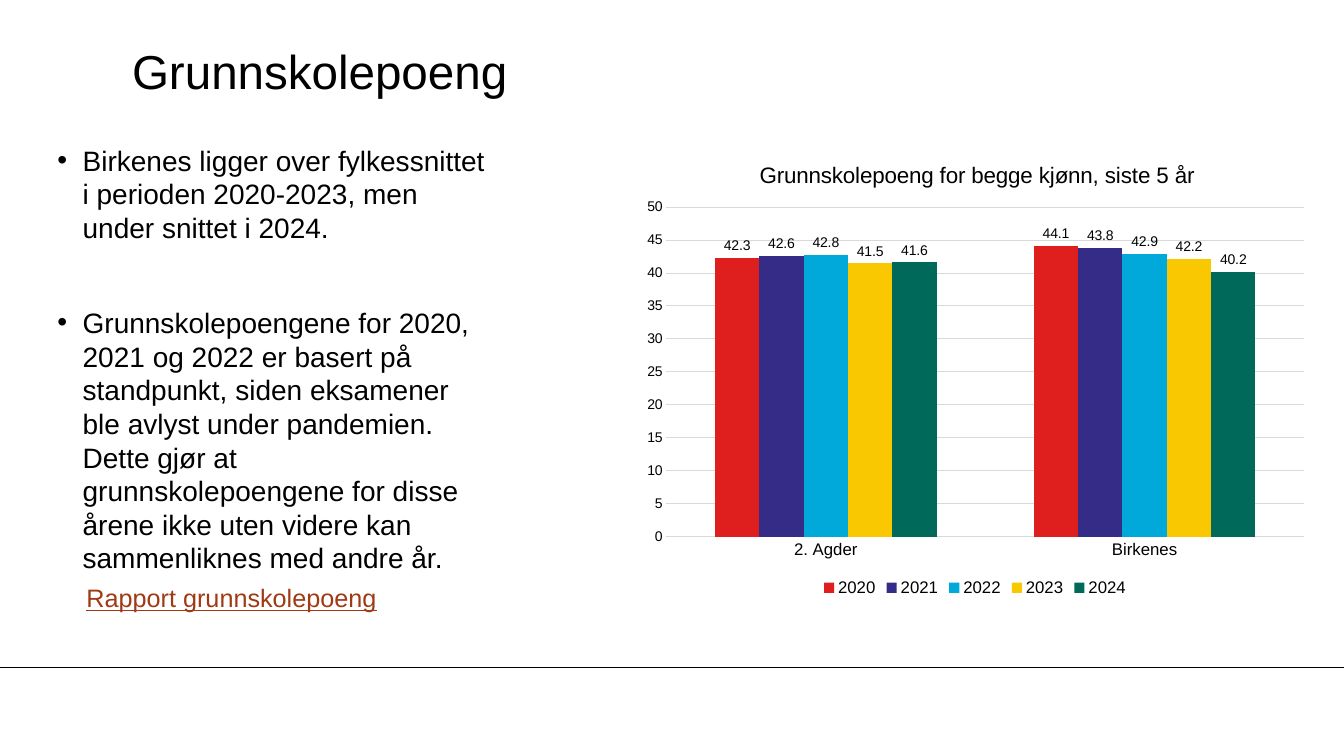
from lxml import etree
from pptx import Presentation
from pptx import util as u
from pptx.chart import data as chart_data
from pptx.dml import color
from pptx.enum import chart as ch, shapes, text
from pptx.oxml import ns

BLACK, GREY = "000000", "D9D9D9"


def style(font, size, hex_color=BLACK):
    font.name, font.size, font.bold = "Arial", u.Pt(size), False
    font.color.rgb = color.RGBColor.from_string(hex_color)


def place(parent, index, **fractions):
    """Give a chart part a fixed place, in fractions of the chart."""
    for old in parent.findall(ns.qn("c:layout")):
        parent.remove(old)
    layout = etree.Element(ns.qn("c:layout"))
    manual = etree.SubElement(layout, ns.qn("c:manualLayout"))
    if "w" in fractions:
        etree.SubElement(manual, ns.qn("c:layoutTarget"), val="inner")
    for axis in "xy":
        etree.SubElement(manual, ns.qn(f"c:{axis}Mode"), val="edge")
    for key, value in fractions.items():
        etree.SubElement(manual, ns.qn(f"c:{key}"), val=str(value))
    parent.insert(index, layout)


deck = Presentation()
deck.slide_width, deck.slide_height = u.Inches(13.33), u.Inches(7.5)
page = deck.slides.add_slide(deck.slide_layouts[5])

# Footer line
rule = page.shapes.add_connector(shapes.MSO_CONNECTOR.STRAIGHT, 0, u.Inches(6.62),
                                 u.Inches(13.33), u.Inches(6.62))
rule.line.color.rgb = color.RGBColor.from_string(BLACK)
rule.line.width = u.Pt(0.75)
etree.SubElement(rule._element.spPr, ns.qn("a:effectLst"))

# Title
title = page.shapes.title
title.left, title.top = u.Inches(1.31), u.Inches(0.32)
title.width, title.height = u.Inches(11.1), u.Inches(0.75)
title.text_frame.text = "Grunnskolepoeng"
title.text_frame.vertical_anchor = text.MSO_ANCHOR.MIDDLE

# Bullets
body = page.shapes.add_textbox(u.Inches(0.57), u.Inches(1.42), u.Inches(4.33), u.Inches(4.3))
body.text_frame.word_wrap = True
for frame in (title.text_frame, body.text_frame):
    frame.margin_left = frame.margin_right = frame.margin_top = frame.margin_bottom = 0
title.text_frame.paragraphs[0].alignment = text.PP_ALIGN.LEFT
style(title.text_frame.paragraphs[0].runs[0].font, 34)

points = [
    "Birkenes ligger over fylkessnittet i perioden 2020-2023, men under snittet i 2024.",
    "Grunnskolepoengene for 2020, 2021 og 2022 er basert på standpunkt, siden eksamener "
    "ble avlyst under pandemien. Dette gjør at grunnskolepoengene for disse årene ikke "
    "uten videre kan sammenliknes med andre år.",
]
body.text_frame.text = "\n".join(points)
for number, para in enumerate(body.text_frame.paragraphs):
    props = para._p.get_or_add_pPr()
    props.set("marL", str(u.Inches(0.25)))
    props.set("indent", str(-u.Inches(0.25)))
    etree.SubElement(props, ns.qn("a:buFont"), typeface="Arial")
    etree.SubElement(props, ns.qn("a:buChar"), char="•")
    para.space_before = u.Pt(44 * number)
    style(para.runs[0].font, 20)

# Report reference
report = page.shapes.add_textbox(u.Inches(0.76), u.Inches(5.73), u.Inches(3.3), u.Inches(0.4))
report.text_frame.word_wrap = True
report.text_frame.text = "Rapport grunnskolepoeng"
report_font = report.text_frame.paragraphs[0].runs[0].font
style(report_font, 18, "9F3A14")
report_font.underline = True

# Chart
years = [
    ("2020", (42.3, 44.1), "DF1F1D"),
    ("2021", (42.6, 43.8), "342C86"),
    ("2022", (42.8, 42.9), "00A9DA"),
    ("2023", (41.5, 42.2), "FAC800"),
    ("2024", (41.6, 40.2), "00695A"),
]
scores = chart_data.CategoryChartData()
scores.categories = ["2. Agder", "Birkenes"]
for year, values, _ in years:
    scores.add_series(year, values)
chart = page.shapes.add_chart(ch.XL_CHART_TYPE.COLUMN_CLUSTERED, u.Inches(6.27), u.Inches(1.42),
                              u.Inches(6.8), u.Inches(4.54), scores).chart
style(chart.font, 10)
chart.has_title = True
chart.chart_title.text_frame.text = "Grunnskolepoeng for begge kjønn, siste 5 år"
style(chart.chart_title.text_frame.paragraphs[0].runs[0].font, 16)
place(chart.chart_title._element, 1, x=0.18, y=0.03)
place(chart._chartSpace.chart.plotArea, 0, x=0.05, y=0.14, w=0.93, h=0.72)

chart.has_legend = True
chart.legend.position = ch.XL_LEGEND_POSITION.BOTTOM
chart.legend.include_in_layout = False
style(chart.legend.font, 12)

# Columns and their labels
plot = chart.plots[0]
plot.gap_width, plot.overlap, plot.vary_by_categories = 219, 0, False
for series, (_, _, fill) in zip(plot.series, years):
    series.format.fill.solid()
    series.format.fill.fore_color.rgb = color.RGBColor.from_string(fill)
    labels = series.data_labels
    labels.show_value = True
    labels.position = ch.XL_LABEL_POSITION.OUTSIDE_END
    style(labels.font, 10)

# Axes
categories, points_axis = chart.category_axis, chart.value_axis
for axis, size in ((categories, 12), (points_axis, 10)):
    axis.major_tick_mark = axis.minor_tick_mark = ch.XL_TICK_MARK.NONE
    style(axis.tick_labels.font, size)
points_axis.minimum_scale, points_axis.maximum_scale, points_axis.major_unit = 0, 50, 5
points_axis.has_major_gridlines = True
points_axis.format.line.fill.background()
for line in (categories.format.line, points_axis.major_gridlines.format.line):
    line.color.rgb = color.RGBColor.from_string(GREY)
    line.width = u.Pt(0.75)

deck.save("out.pptx")
